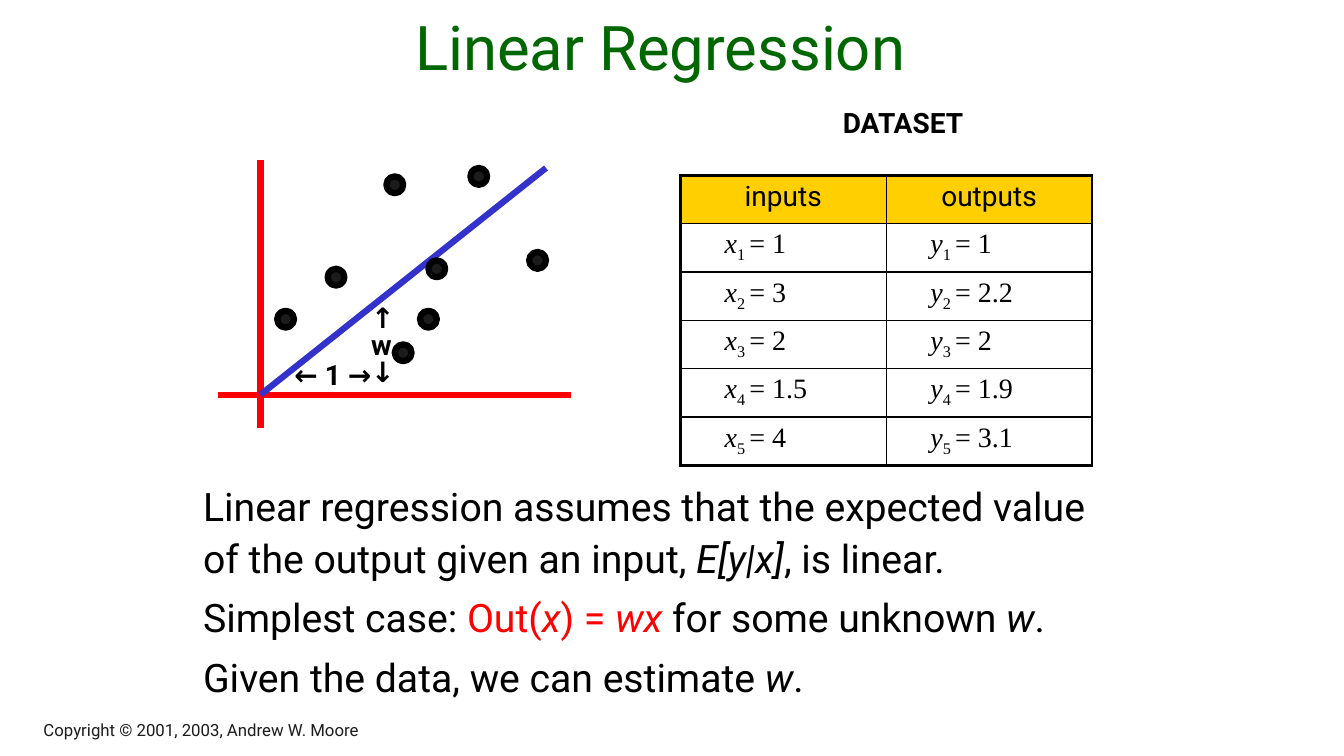
from lxml.etree import SubElement
from pptx import Presentation
from pptx.dml.color import RGBColor
from pptx.enum.shapes import MSO_CONNECTOR, MSO_SHAPE
from pptx.enum.text import MSO_ANCHOR, PP_ALIGN
from pptx.oxml.ns import qn
from pptx.util import Inches, Pt

COLOURS = {
    "title": "006600", "text": "000000", "accent": "FF0000", "footer": "1C1C1C",
    "axis": "FF0000", "fit": "3333CC", "dot": "1C1C1C", "rim": "000000",
    "header": "FFCF01", "border": "000000",
}
SANS, SERIF = "Roboto", "Times New Roman"
ITALIC = {"italic": True}
RED = {"colour": "accent"}

# Dots of the scatter plot, as column and row of their upper left corner
DOTS = [(46, 21), (51, 31), (39, 32), (33, 37), (47, 41), (50, 37), (56, 20), (63, 30)]
DATASET = [("1", "1"), ("3", "2.2"), ("2", "2"), ("1.5", "1.9"), ("4", "3.1")]


def grid(count):
    """Length of a number of grid columns or rows, twelve to the inch."""
    return Inches(count / 12)


def colour(name):
    return RGBColor.from_string(COLOURS[name])


def add_spans(para, spans, base):
    """Fill a paragraph with (text, format) pairs that vary a base format."""
    for text, changes in spans:
        style = {"name": SANS, "colour": "text", **base, **changes}
        span = para.add_run()
        span.text = text
        span.font.color.rgb = colour(style.pop("colour"))
        baseline = style.pop("baseline", None)
        if baseline:
            span._r.get_or_add_rPr().set("baseline", str(baseline))
        for attribute, value in style.items():
            setattr(span.font, attribute, value)


def add_text(page, place, paragraphs, base, frame_format=None, para_format=None, gap=0):
    box = page.shapes.add_textbox(*map(grid, place))
    frame = box.text_frame
    for attribute, value in {"word_wrap": True, **(frame_format or {})}.items():
        setattr(frame, attribute, value)
    for index, spans in enumerate(paragraphs):
        para = frame.add_paragraph() if index else frame.paragraphs[0]
        for attribute, value in (para_format or {}).items():
            setattr(para, attribute, value)
        if index:
            para.space_before = Pt(gap)
        add_spans(para, spans, base)


def add_line(page, start, end, name):
    line = page.shapes.add_connector(MSO_CONNECTOR.STRAIGHT, *map(grid, start + end))
    line.line.color.rgb = colour(name)
    line.line.width = Pt(4.5)
    SubElement(line._element.spPr, qn("a:effectLst"))


def add_dot(page, column, row):
    dot = page.shapes.add_shape(
        MSO_SHAPE.FLOWCHART_CONNECTOR, *map(grid, (column, row, 2, 2)))
    dot.shadow.inherit = False
    dot.fill.solid()
    dot.fill.fore_color.rgb = colour("dot")
    dot.line.color.rgb = colour("rim")
    dot.line.width = Pt(4.5)


def add_borders(cell, outer_sides):
    """Thin borders inside the table, thick ones on its outer sides."""
    properties = cell._tc.get_or_add_tcPr()
    for index, side in enumerate(("lnL", "lnR", "lnT", "lnB")):
        width = Pt(2.25 if side in outer_sides else 1)
        border = properties.makeelement(qn(f"a:{side}"), {"w": str(width)})
        fill = SubElement(border, qn("a:solidFill"))
        SubElement(fill, qn("a:srgbClr"), val=COLOURS["border"])
        properties.insert(index, border)


def add_dataset(page, place):
    rows = len(DATASET) + 1
    table = page.shapes.add_table(rows, 2, *map(grid, place)).table
    for row_index in range(rows):
        for column_index, (heading, letter) in enumerate((("inputs", "x"), ("outputs", "y"))):
            cell = table.cell(row_index, column_index)
            para = cell.text_frame.paragraphs[0]
            if row_index == 0:
                cell.fill.solid()
                cell.fill.fore_color.rgb = colour("header")
                para.alignment = PP_ALIGN.CENTER
                add_spans(para, [(heading, {})], {"size": Pt(20)})
            else:
                cell.fill.background()
                cell.margin_left = Inches(0.44)
                value = DATASET[row_index - 1][column_index]
                spans = [(letter, ITALIC), (f"{row_index} ", {"baseline": -25000}),
                         (f"= {value}", {})]
                add_spans(para, spans, {"size": Pt(20), "name": SERIF})
            outer = {"lnR" if column_index else "lnL"}
            if row_index == 0:
                outer.add("lnT")
            if row_index == rows - 1:
                outer.add("lnB")
            add_borders(cell, outer)


def add_plot(page):
    # Axes and fitted line
    add_line(page, (31, 19), (31, 51), "axis")
    add_line(page, (26, 47), (68, 47), "axis")
    add_line(page, (31, 47), (65, 20), "fit")
    for column, row in DOTS:
        add_dot(page, column, row)
    # Run and rise of the slope
    label = {"size": Pt(20), "bold": True}
    add_text(page, (33, 42, 20, 5.2), [[("← 1 →", {})]], label,
             {"margin_left": Inches(0.17)})
    add_text(page, (43, 36, 6, 10.8), [[(mark, {})] for mark in "↑w↓"], label,
             para_format={"line_spacing": 0.8})


def main():
    deck = Presentation()
    deck.slide_width, deck.slide_height = grid(160), grid(90)
    page = deck.slides.add_slide(deck.slide_layouts[6])
    centred = {"alignment": PP_ALIGN.CENTER}
    at_bottom = {"vertical_anchor": MSO_ANCHOR.BOTTOM}

    # Footer and title
    add_text(page, (4, 85.3, 88.8, 3.4),
             [[("Copyright © 2001, 2003, Andrew W. Moore", {})]],
             {"size": Pt(12), "colour": "footer"}, at_bottom)
    add_text(page, (4, 2, 149.25, 8.5), [[("Linear Regression", {})]],
             {"size": Pt(44), "colour": "title"}, at_bottom, centred)

    # Explanation
    explanation = [
        [("Linear regression assumes that the expected value of the output "
          "given an input, ", {}), ("E[y|x]", ITALIC), (", is linear.", {})],
        [("Simplest case: ", {}), ("Out(", RED), ("x", {**RED, **ITALIC}),
         (") = ", RED), ("wx ", {**RED, **ITALIC}), ("for some unknown ", {}),
         ("w", ITALIC), (".", {})],
        [("Given the data, we can estimate ", {}), ("w", ITALIC), (".", {})],
    ]
    add_text(page, (23, 56.25, 112.5, 28.7), explanation, {"size": Pt(28)},
             para_format={"line_spacing": 1.1}, gap=5.6)

    # Dataset
    add_dataset(page, (81, 20.9, 49, 34.4))
    add_text(page, (82, 12, 51, 5.2), [[("DATASET", {})]],
             {"size": Pt(20), "bold": True}, para_format=centred)

    # Scatter plot
    add_plot(page)
    deck.save("out.pptx")


if __name__ == "__main__":
    main()
